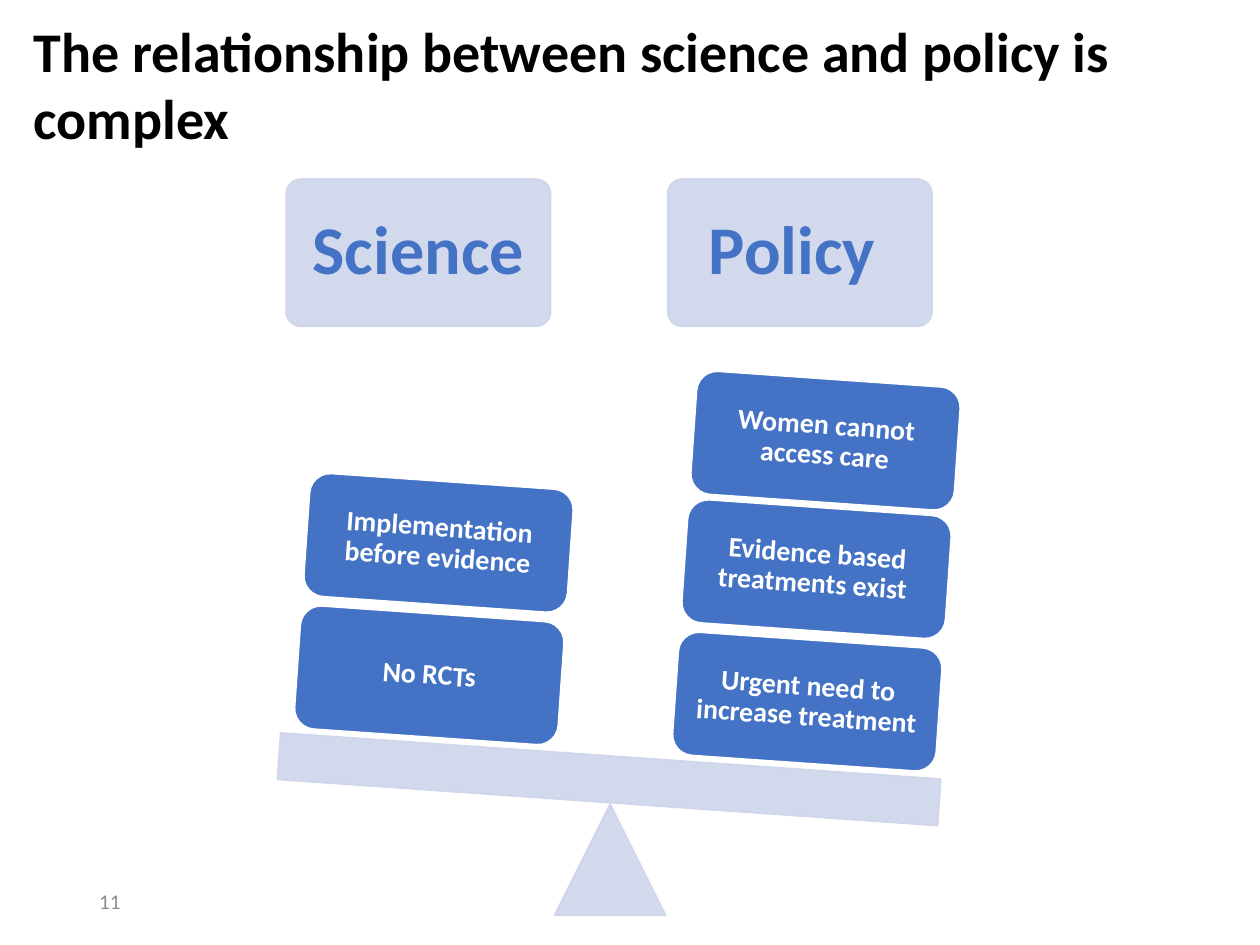
import math

import pptx
import pptx.dml.color
import pptx.enum.shapes
import pptx.enum.text
import pptx.oxml
import pptx.oxml.ns
import pptx.util

Cm = pptx.util.Cm
SHAPE = pptx.enum.shapes.MSO_SHAPE
ALIGN = pptx.enum.text.PP_ALIGN
ANCHOR = pptx.enum.text.MSO_ANCHOR

BLUE, PALE, WHITE, BLACK, GREY = "4472C4", "CFD5EA", "FFFFFF", "000000", "8C8C8C"
TILT = 4  # degrees


def colour(value):
    return pptx.dml.color.RGBColor.from_string(value)


def set_opacity(shape, percent):
    """Make the solid fill and line of a shape partly transparent."""
    for solid in shape.element.spPr.iter(pptx.oxml.ns.qn("a:solidFill")):
        solid[0].append(pptx.oxml.parse_xml(
            f'<a:alpha {pptx.oxml.ns.nsdecls("a")} val="{percent * 1000}"/>'))


class SlideBuilder:
    font = "Calibri"

    def __init__(self, slide):
        self.slide = slide

    def fill_text(self, shape, text, size, value, bold=True, align=ALIGN.LEFT,
                  anchor=ANCHOR.TOP, spacing=None, margin=None):
        frame = shape.text_frame
        frame.word_wrap = True
        frame.vertical_anchor = anchor
        if margin is not None:
            frame.margin_left = frame.margin_right = Cm(margin)
            frame.margin_top = frame.margin_bottom = Cm(margin)
        paragraph = frame.paragraphs[0]
        paragraph.alignment = align
        if spacing:
            paragraph.line_spacing = spacing
        run = paragraph.add_run()
        run.text = text
        run.font.name = self.font
        run.font.size = pptx.util.Pt(size)
        run.font.bold = bold
        run.font.color.rgb = colour(value)

    def text(self, left, top, width, height, text, size, value, **style):
        box = self.slide.shapes.add_textbox(Cm(left), Cm(top), Cm(width), Cm(height))
        self.fill_text(box, text, size, value, **style)

    def shape(self, kind, left, top, width, height, fill=PALE, line=PALE,
              opacity=90, rotation=0):
        shape = self.slide.shapes.add_shape(
            kind, Cm(left), Cm(top), Cm(width), Cm(height))
        shape.shadow.inherit = False
        shape.rotation = rotation
        shape.fill.solid()
        shape.fill.fore_color.rgb = colour(fill)
        shape.line.color.rgb = colour(line)
        shape.line.width = pptx.util.Pt(1)
        if opacity < 100:
            set_opacity(shape, opacity)
        return shape

    def heading(self, left, text):
        shape = self.shape(SHAPE.ROUNDED_RECTANGLE, left, 3.61, 5.33, 2.97)
        shape.adjustments[0] = 0.1
        self.fill_text(shape, text, 39, BLUE, align=ALIGN.CENTER,
                       anchor=ANCHOR.MIDDLE, spacing=0.9, margin=0.41)

    def stack(self, left, top, labels):
        """Pile weights upwards, leaning with the beam."""
        for rise, label in zip((0, 2.67, 5.26), labels):
            lean = rise * math.tan(math.radians(TILT))
            shape = self.shape(SHAPE.ROUNDED_RECTANGLE, left + lean, top - rise,
                               5.33, 2.49, BLUE, WHITE, 100, TILT)
            self.fill_text(shape, label, 16, WHITE, align=ALIGN.CENTER,
                           anchor=ANCHOR.MIDDLE, spacing=0.9, margin=0.17)


def main():
    presentation = pptx.Presentation()
    presentation.slide_width, presentation.slide_height = Cm(25.4), Cm(19.05)
    slide = presentation.slides.add_slide(presentation.slide_layouts[6])
    builder = SlideBuilder(slide)

    # Page number
    builder.text(1.75, 17.65, 5.72, 1.02, "11", 12, GREY, bold=False,
                 anchor=ANCHOR.MIDDLE)

    # Headings of the two sides
    builder.heading(5.77, "Science ")
    builder.heading(13.46, "Policy ")

    # Pivot and beam
    builder.shape(SHAPE.ISOSCELES_TRIANGLE, 11.18, 16.21, 2.24, 2.24)
    builder.shape(SHAPE.RECTANGLE, 5.61, 15.24, 13.34, 0.94, rotation=TILT)

    # Weights, from the beam upwards
    builder.stack(13.61, 12.9, ["Urgent need to increase treatment",
                                "Evidence based treatments exist ",
                                "Women cannot access care"])
    builder.stack(5.99, 12.37, ["No RCTs", "Implementation before evidence"])

    # Title
    builder.text(0.43, 0.2, 22.43, 3,
                 "The relationship between science and policy is complex", 32, BLACK)

    presentation.save("out.pptx")


if __name__ == "__main__":
    main()
